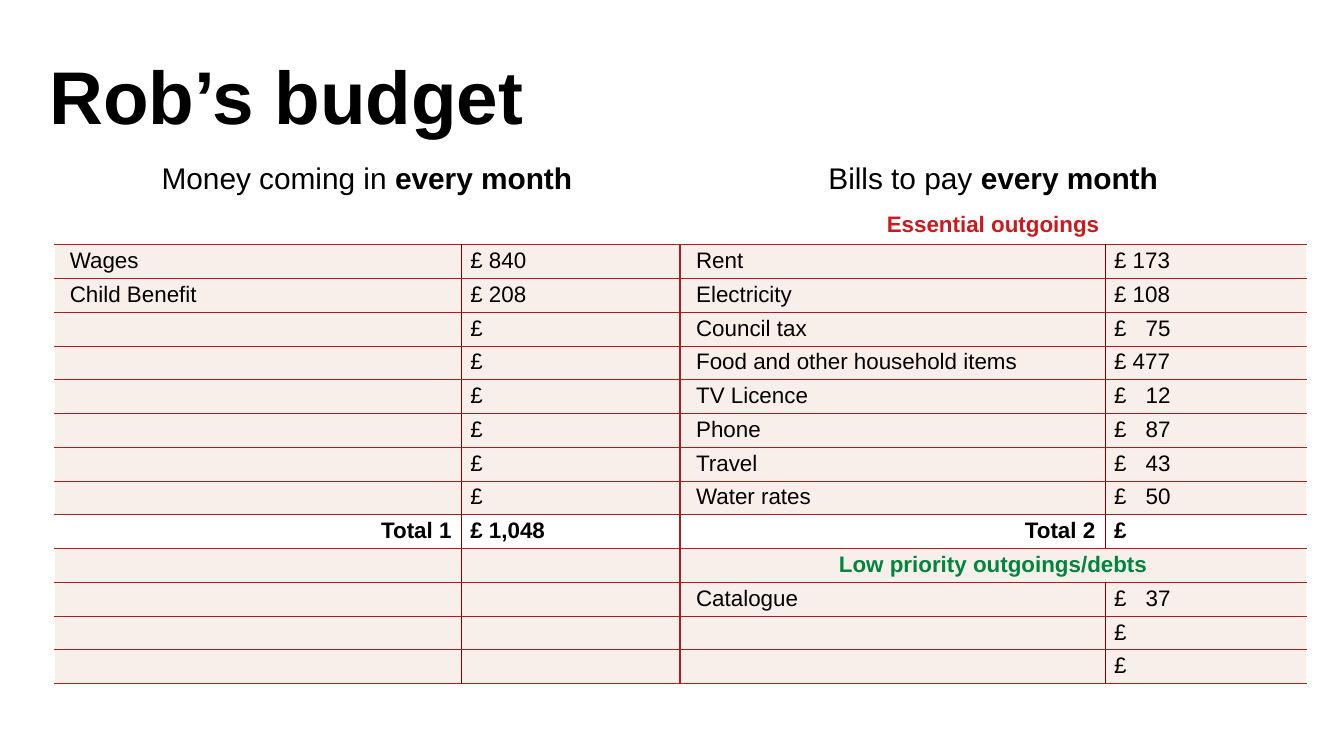
from dataclasses import dataclass

from lxml.etree import SubElement
from pptx import Presentation
from pptx.dml.color import RGBColor
from pptx.enum.text import MSO_ANCHOR, PP_ALIGN
from pptx.oxml.ns import qn
from pptx.util import Inches, Pt

FONT = "Arial"
BLACK, WHITE, CREAM = "000000", "FFFFFF", "F9EFEA"
RED, MAROON, ESSENTIAL, LOW_PRIORITY = "AB1D1F", "800000", "CC191D", "00853F"
SLIDE_WIDTH = 10
COLUMN_WIDTHS = (3.03, 1.63, 3.16, 1.5)
HEADING_HEIGHTS = (0.38, 0.27)
ITEMS_HEIGHT = 3.27
CELL_INSET, LABEL_INSET = 0.07, 0.12
AMOUNT_TAB = 0.42


@dataclass(frozen=True)
class Words:
    text: str
    bold: bool = False
    color: str = BLACK
    size: int = 12


@dataclass(frozen=True)
class Entry:
    words: tuple[Words, ...] = ()
    align: PP_ALIGN = PP_ALIGN.LEFT
    inset: float = CELL_INSET
    span: int = 1
    fill: str = CREAM


@dataclass(frozen=True)
class Edge:
    color: str
    width: float = 0.25


EMPTY = Entry()
COLUMN_EDGES = (Edge(WHITE), Edge(MAROON), Edge(RED, 0.75), Edge(MAROON), Edge(WHITE))


def label(name: str) -> Entry:
    return Entry((Words(name),), inset=LABEL_INSET) if name else EMPTY


def amount(value: str = "") -> Entry:
    """Pounds, with two-digit sums tabbed to line up under three-digit ones."""
    gap = "\t" if len(value) == 2 else " "
    return Entry((Words(f"£{gap}{value}" if value else "£"),))


def heading(*words: Words, fill: str = WHITE) -> Entry:
    return Entry(words, PP_ALIGN.CENTER, span=2, fill=fill)


def total(name: str, value: str) -> list[Entry]:
    return [Entry((Words(name, True),), PP_ALIGN.RIGHT, fill=WHITE),
            Entry((Words(value, True),), fill=WHITE)]


def month_heading(lead: str) -> Entry:
    return heading(Words(lead, size=16), Words("every month", True, size=16))


def budget_rows() -> list[list[Entry]]:
    income = [("Wages", "840"), ("Child Benefit", "208")] + [("", "")] * 6
    bills = [
        ("Rent", "173"), ("Electricity", "108"), ("Council tax", "75"),
        ("Food and other household items", "477"), ("TV Licence", "12"),
        ("Phone", "87"), ("Travel", "43"), ("Water rates", "50"),
    ]
    debts = [("Catalogue", "37"), ("", ""), ("", "")]
    blank = Entry(fill=WHITE)
    return [
        [month_heading("Money coming in "), month_heading("Bills to pay ")],
        [blank, blank, heading(Words("Essential outgoings", True, ESSENTIAL))],
        *([label(source), amount(received), label(bill), amount(due)]
          for (source, received), (bill, due) in zip(income, bills)),
        total("Total 1", "£ 1,048") + total("Total 2", "£"),
        [EMPTY, EMPTY,
         heading(Words("Low priority outgoings/debts", True, LOW_PRIORITY), fill=CREAM)],
        *([EMPTY, EMPTY, label(debt), amount(due)] for debt, due in debts),
    ]


def rgb(color: str) -> RGBColor:
    return RGBColor.from_string(color)


def add_words(paragraph, words: Words) -> None:
    run = paragraph.add_run()
    run.text = words.text
    run.font.name = FONT
    run.font.size = Pt(words.size)
    run.font.bold = words.bold
    run.font.color.rgb = rgb(words.color)


def set_amount_tab(paragraph) -> None:
    """Right-align the figures after the pound sign."""
    tabs = SubElement(paragraph._p.get_or_add_pPr(), qn("a:tabLst"))
    SubElement(tabs, qn("a:tab"), pos=str(Inches(AMOUNT_TAB)), algn="r")


def row_edge(index: int) -> Edge:
    if index < 2:
        return Edge(WHITE, 0.75 if index else 0.25)
    return Edge(RED, 0.75 if index == 2 else 0.25)


def set_borders(cell, row: int, column: int, span: int) -> None:
    sides = (COLUMN_EDGES[column], COLUMN_EDGES[column + span])
    left, right = sides if row >= 2 else (Edge(WHITE), Edge(WHITE))
    edges = {"L": left, "R": right, "T": row_edge(row), "B": row_edge(row + 1)}
    properties = cell._tc.get_or_add_tcPr()
    for position, (side, edge) in enumerate(edges.items()):
        line = SubElement(properties, qn(f"a:ln{side}"), w=str(Pt(edge.width)))
        fill = SubElement(line, qn("a:solidFill"))
        SubElement(fill, qn("a:srgbClr"), val=edge.color)
        properties.insert(position, line)


def fill_cell(cell, entry: Entry) -> None:
    cell.fill.solid()
    cell.fill.fore_color.rgb = rgb(entry.fill)
    cell.margin_left = Inches(entry.inset)
    cell.margin_right = Inches(CELL_INSET)
    cell.margin_top = cell.margin_bottom = Inches(0)
    cell.vertical_anchor = MSO_ANCHOR.TOP
    paragraph = cell.text_frame.paragraphs[0]
    paragraph.alignment = entry.align
    paragraph.line_spacing = 1.15
    for words in entry.words:
        add_words(paragraph, words)
    if any("\t" in words.text for words in entry.words):
        set_amount_tab(paragraph)
    if not entry.words:
        SubElement(paragraph._p, qn("a:endParaRPr"), sz="1200")


def add_budget(slide) -> None:
    rows = budget_rows()
    frame = slide.shapes.add_table(
        len(rows), len(COLUMN_WIDTHS), Inches(0.4), Inches(1.17),
        Inches(sum(COLUMN_WIDTHS)), Inches(sum(HEADING_HEIGHTS) + ITEMS_HEIGHT))
    table = frame.table
    table.first_row = table.horz_banding = False
    for column, width in zip(table.columns, COLUMN_WIDTHS):
        column.width = Inches(width)
    item_count = len(rows) - len(HEADING_HEIGHTS)
    heights = HEADING_HEIGHTS + (ITEMS_HEIGHT / item_count,) * item_count
    for row_index, (entries, height) in enumerate(zip(rows, heights)):
        table.rows[row_index].height = Inches(height)
        column_index = 0
        for entry in entries:
            cell = table.cell(row_index, column_index)
            last = column_index + entry.span - 1
            if entry.span > 1:
                covered = table.cell(row_index, last)
                cell.merge(covered)
                fill_cell(covered, Entry(fill=entry.fill))
                set_borders(covered, row_index, last, 1)
            fill_cell(cell, entry)
            set_borders(cell, row_index, column_index, entry.span)
            column_index += entry.span


def add_title(slide) -> None:
    title = slide.shapes.add_textbox(Inches(0.27), Inches(0.24), Inches(7.17), Inches(0.81))
    title.text_frame.word_wrap = True
    paragraph = title.text_frame.paragraphs[0]
    paragraph.line_spacing = Pt(54)
    add_words(paragraph, Words("Rob’s budget", True, size=40))


def main() -> None:
    deck = Presentation()
    deck.slide_width = Inches(SLIDE_WIDTH)
    deck.slide_height = Inches(SLIDE_WIDTH * 9 / 16)
    slide = deck.slides.add_slide(deck.slide_layouts[6])
    add_title(slide)
    add_budget(slide)
    deck.save("out.pptx")


if __name__ == "__main__":
    main()
